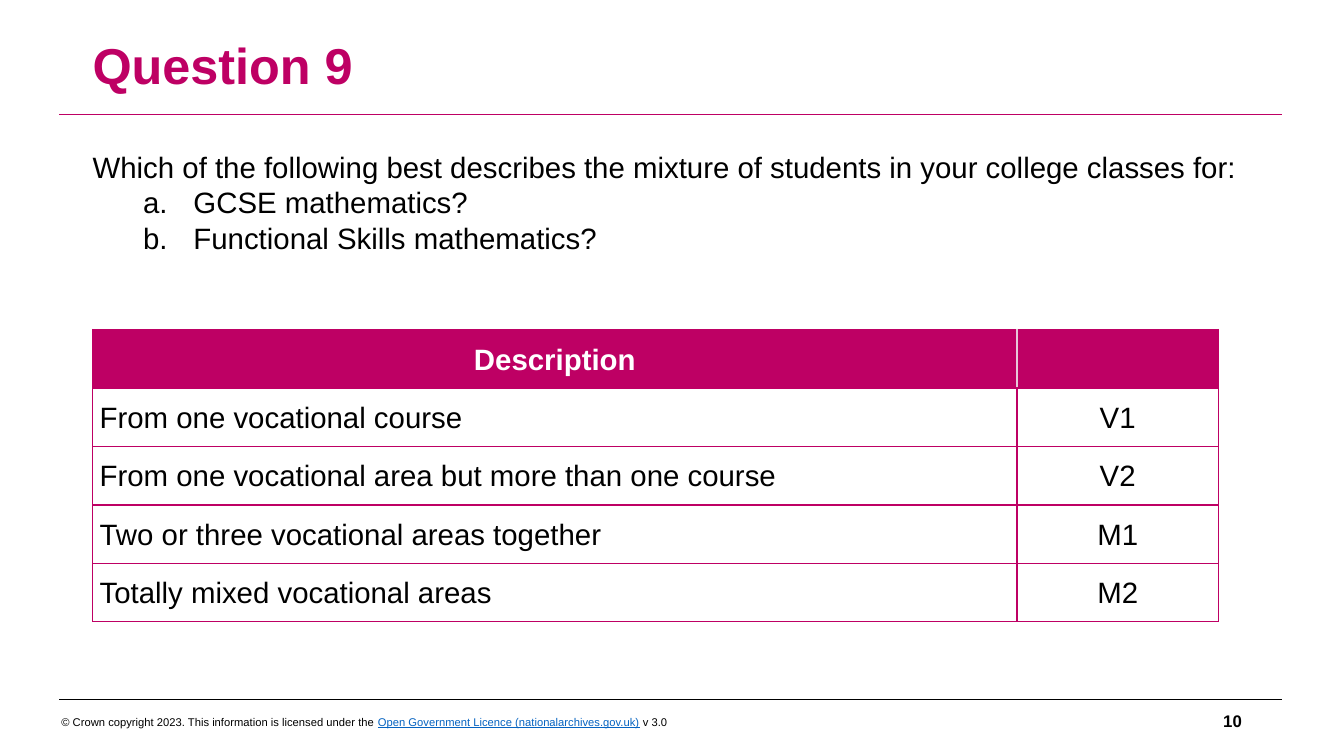
"""Build the Question 9 slide with its table of class mixtures."""
from lxml import etree
from pptx import Presentation
from pptx.dml.color import RGBColor
from pptx.enum.shapes import MSO_CONNECTOR
from pptx.enum.text import MSO_ANCHOR, PP_ALIGN
from pptx.oxml.ns import qn
from pptx.util import Pt

STRAIGHT = MSO_CONNECTOR.STRAIGHT
TOP, MIDDLE = MSO_ANCHOR.TOP, MSO_ANCHOR.MIDDLE
LEFT, CENTER, RIGHT = PP_ALIGN.LEFT, PP_ALIGN.CENTER, PP_ALIGN.RIGHT
C = {"magenta": "BE0064", "pale": "E6C8D9", "black": "000000",
     "white": "FFFFFF", "link": "0563C1"}


def style(r, size, color="black", bold=False):
    r.font.name = "Arial"
    r.font.size = Pt(size)
    r.font.bold = bold
    r.font.color.rgb = RGBColor.from_string(C[color])


def add_text(s, box, text, size, color="black", bold=False, anchor=MIDDLE, align=LEFT):
    tf = s.shapes.add_textbox(*[Pt(v) for v in box]).text_frame
    tf.word_wrap = True
    tf.vertical_anchor = anchor
    tf.text = text
    for p in tf.paragraphs:
        p.alignment = align
        for r in p.runs:
            style(r, size, color, bold)
    return tf


prs = Presentation()
prs.slide_width, prs.slide_height = Pt(960), Pt(540)
s = prs.slides.add_slide(prs.slide_layouts[6])

for y, color in ((499.7, "black"), (82.1, "magenta")):
    line = s.shapes.add_connector(STRAIGHT, Pt(42.5), Pt(y), Pt(915.8), Pt(y))
    line.line.color.rgb = RGBColor.from_string(C[color])
    line.line.width = Pt(0.75)
    etree.SubElement(line._element.spPr, qn("a:effectLst"))

add_text(s, (678.2, 500.4, 216, 28.8), "10", 12, bold=True, align=RIGHT)

rows = [("Description", ""),
        ("From one vocational course", "V1"),
        ("From one vocational area but more than one course", "V2"),
        ("Two or three vocational areas together", "M1"),
        ("Totally mixed vocational areas", "M2")]
table = s.shapes.add_table(len(rows), 2, Pt(66.2), Pt(235.4), Pt(804.2), Pt(208.8)).table
table.horz_banding = False
table.columns[0].width, table.columns[1].width = Pt(660.2), Pt(144)
for i, row in enumerate(rows):
    table.rows[i].height = Pt(41.76)
    for j, text in enumerate(row):
        cell = table.cell(i, j)
        cell.vertical_anchor = MIDDLE
        cell.margin_left = cell.margin_right = Pt(5)
        cell.margin_top = cell.margin_bottom = 0
        tcPr = cell._tc.get_or_add_tcPr()
        for side in "LRTB":
            inner = i == 0 and side == "RL"[j]
            ln = etree.SubElement(tcPr, qn("a:ln" + side), w=str(Pt(1)))
            fill = etree.SubElement(ln, qn("a:solidFill"))
            etree.SubElement(fill, qn("a:srgbClr"), val=C["pale" if inner else "magenta"])
        if i == 0:
            cell.fill.solid()
            cell.fill.fore_color.rgb = RGBColor.from_string(C["magenta"])
        else:
            cell.fill.background()
        if text:
            cell.text = text
            p = cell.text_frame.paragraphs[0]
            p.alignment = CENTER if i == 0 or j == 1 else LEFT
            p.line_spacing = 1.07
            p.space_after = Pt(8)
            style(p.runs[0], 21, "black" if i else "white", i == 0)

tf = add_text(s, (66.2, 106.6, 851.8, 76.3),
              "Which of the following best describes the mixture of students "
              "in your college classes for:\n"
              "a. \tGCSE mathematics?\nb. \tFunctional Skills mathematics?", 21, anchor=TOP)
tf.margin_left = tf.margin_right = tf.margin_top = tf.margin_bottom = 0
for p in tf.paragraphs[1:]:
    pPr = p._p.get_or_add_pPr()
    pPr.set("marL", str(Pt(36)))
    pPr.set("indent", "0")

tf = add_text(s, (36.7, 504.7, 605.5, 21.6),
              "© Crown copyright 2023. This information is licensed under the ", 8)
for text, color in (("Open Government Licence (nationalarchives.gov.uk)", "link"),
                    (" v 3.0", "black")):
    r = tf.paragraphs[0].add_run()
    r.text = text
    style(r, 8, color)
    r.font.underline = color == "link"

tf = add_text(s, (59, 8.6, 625.7, 79.9), "Question 9", 36, "magenta", True)
tf.paragraphs[0].line_spacing = 0.9

prs.save("out.pptx")
